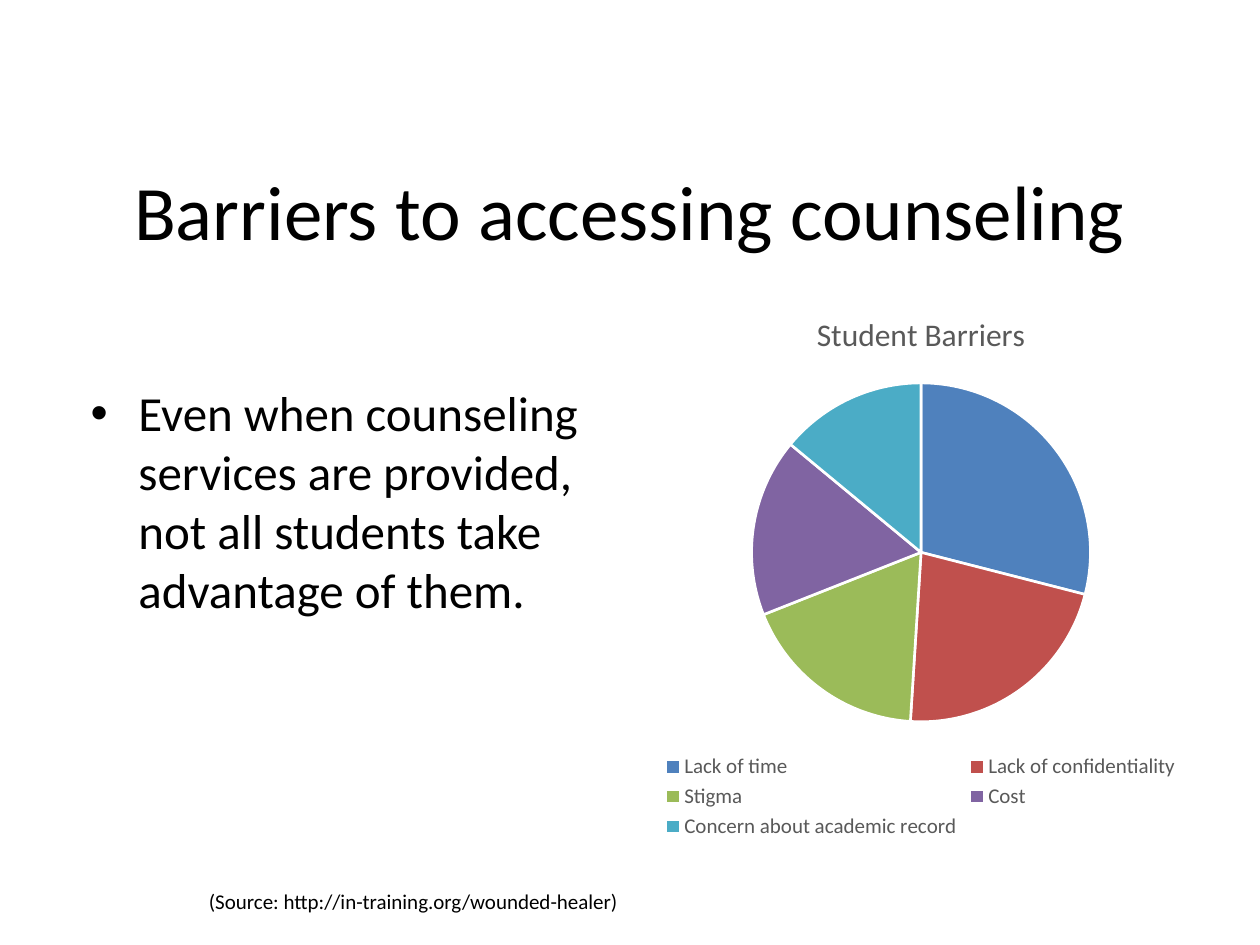
from lxml import etree
from pptx import Presentation
from pptx import util as u
from pptx.chart.data import CategoryChartData
from pptx.dml.color import RGBColor
from pptx.enum import chart as ch, text
from pptx.oxml import parse_xml
from pptx.oxml.ns import nsdecls, qn


def style(font, size, color):
    values = {"name": "Calibri", "size": u.Pt(size), "bold": False}
    for key, value in values.items():
        setattr(font, key, value)
    font.color.rgb = RGBColor.from_string(color)


def add_text(words, box, size, align, anchor):
    frame = slide.shapes.add_textbox(*map(u.Inches, box)).text_frame
    frame.word_wrap = True
    frame.vertical_anchor = anchor
    paragraph = frame.paragraphs[0]
    paragraph.alignment = align
    run = paragraph.add_run()
    run.text = words
    style(run.font, size, "000000")
    return paragraph


deck = Presentation()
deck.slide_width, deck.slide_height = u.Inches(10), u.Inches(7.5)
slide = deck.slides.add_slide(deck.slide_layouts[6])
left, center = text.PP_ALIGN.LEFT, text.PP_ALIGN.CENTER
top, middle = text.MSO_ANCHOR.TOP, text.MSO_ANCHOR.MIDDLE

# Heading, statement and source line
add_text("Barriers to accessing counseling", (0.5, 1.04, 9, 1.25), 44, center, middle)
statement = add_text(
    "Even when counseling services are provided, not all students take advantage of them.",
    (0.62, 2.99, 4.42, 2.2), 28, left, top)
add_text("(Source: http://in-training.org/wounded-healer)",
         (1.56, 7, 3.6, 0.3), 12, left, top)

# Bullet with hanging indent
indent = u.Inches(0.38)
bullet_props = statement._p.get_or_add_pPr()
bullet_props.set("marL", str(indent))
bullet_props.set("indent", str(-indent))
etree.SubElement(bullet_props, qn("a:buFont")).set("typeface", "Arial")
etree.SubElement(bullet_props, qn("a:buChar")).set("char", "•")

# Pie of student barriers
barriers = [
    ("Lack of time", 29, "4F81BD"),
    ("Lack of confidentiality", 22, "C0504D"),
    ("Stigma", 18, "9BBB59"),
    ("Cost", 17, "8064A2"),
    ("Concern about academic record", 14, "4BACC6"),
]
barrier_data = CategoryChartData()
barrier_data.categories = [name for name, share, color in barriers]
barrier_data.add_series("Series 1", [share for name, share, color in barriers])
pie = slide.shapes.add_chart(
    ch.XL_CHART_TYPE.PIE, *map(u.Inches, (4.62, 2.29, 5.38, 4.41)), barrier_data).chart
style(pie.font, 10, "000000")

pie.has_title = True
pie_title = pie.chart_title.text_frame
pie_title.text = "Student Barriers"
style(pie_title.paragraphs[0].runs[0].font, 18, "595959")
pie.chart_title.include_in_layout = False

pie.has_legend = True
pie.legend.position = ch.XL_LEGEND_POSITION.BOTTOM
pie.legend.include_in_layout = False
style(pie.legend.font, 12, "595959")

pie.plots[0].vary_by_categories = True
for index, (name, share, color) in enumerate(barriers):
    slice_format = pie.plots[0].series[0].points[index].format
    slice_format.fill.solid()
    slice_format.fill.fore_color.rgb = RGBColor.from_string(color)
    slice_format.line.color.rgb = RGBColor.from_string("FFFFFF")
    slice_format.line.width = u.Pt(1.5)

# Fixed place of the pie inside the chart
plot_area = pie._chartSpace.chart.plotArea
for old_layout in plot_area.findall(qn("c:layout")):
    plot_area.remove(old_layout)
layout_values = [("layoutTarget", "inner"), ("xMode", "edge"), ("yMode", "edge"),
                 ("x", 0.25), ("y", 0.17), ("w", 0.5), ("h", 0.61)]
parts = "".join(f'<c:{key} val="{value}"/>' for key, value in layout_values)
plot_area.insert(0, parse_xml(
    f'<c:layout {nsdecls("c")}><c:manualLayout>{parts}</c:manualLayout></c:layout>'))

deck.save("out.pptx")
